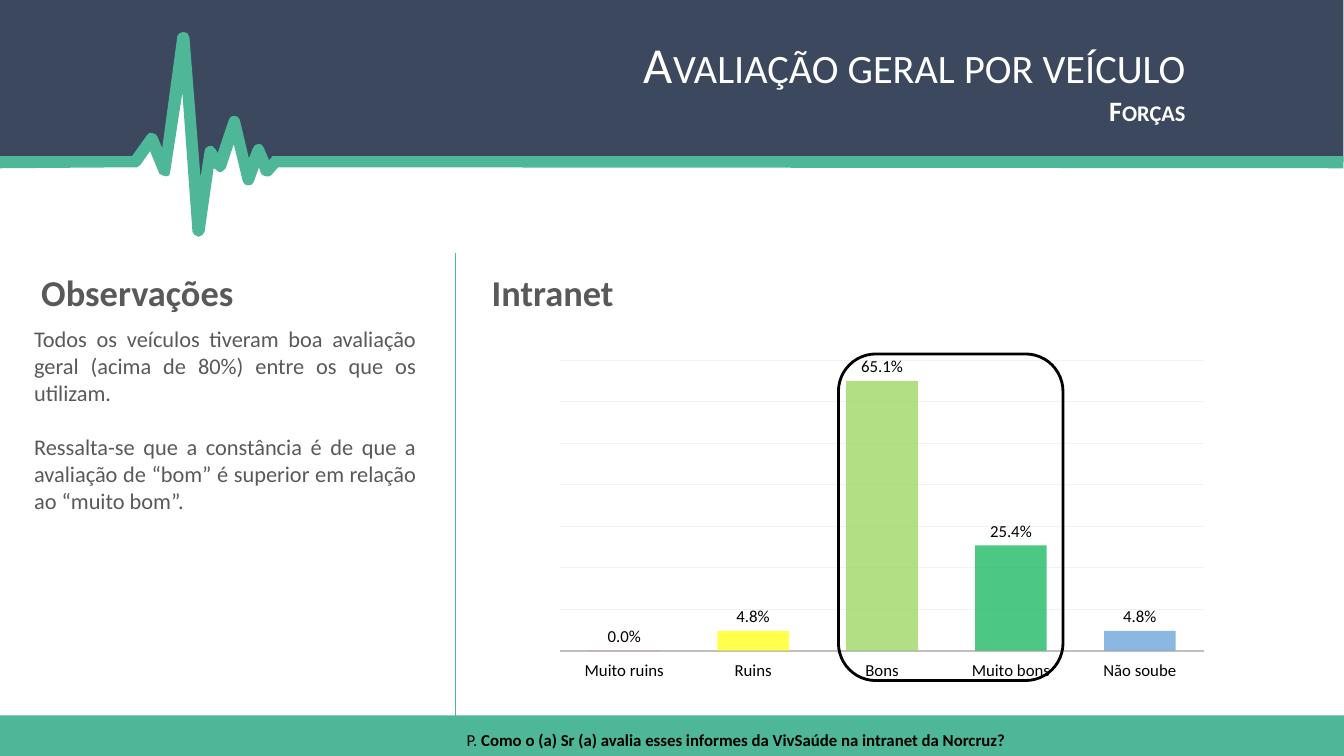
from lxml.etree import SubElement
from pptx import Presentation
from pptx.chart.data import CategoryChartData
from pptx.dml.color import RGBColor
from pptx.enum.chart import XL_CHART_TYPE, XL_LABEL_POSITION, XL_TICK_LABEL_POSITION, XL_TICK_MARK
from pptx.enum.shapes import MSO_CONNECTOR, MSO_SHAPE
from pptx.enum.text import MSO_ANCHOR, MSO_AUTO_SIZE, PP_ALIGN
from pptx.oxml import parse_xml
from pptx.oxml.ns import nsdecls, qn
from pptx.util import Cm, Pt

NAVY = RGBColor(0x3B, 0x48, 0x5D)
GREEN = RGBColor(0x4E, 0xB7, 0x98)
GRAY = RGBColor(0x59, 0x59, 0x59)
WHITE = RGBColor(0xFF, 0xFF, 0xFF)
BLACK = RGBColor(0, 0, 0)
AXIS_GRAY = RGBColor(0xBF, 0xBF, 0xBF)
GRID_GRAY = RGBColor(0xF2, 0xF2, 0xF2)
BLUE = RGBColor(0x5B, 0x9B, 0xD5)
RED = RGBColor(0xFF, 0, 0)
YELLOW = RGBColor(0xFF, 0xFF, 0)
LIME = RGBColor(0x92, 0xD0, 0x50)
LEAF = RGBColor(0, 0xB0, 0x50)

WIDTH, HEIGHT = 33.87, 19.05

# Outline points in hundredths of an inch
HEADER = [
    (1333, 0), (0, 0), (0, 161), (134, 160), (152, 141), (162, 167), (181, 74), (197, 204),
    (208, 155), (218, 165), (231, 126), (246, 176), (258, 153), (265, 169), (275, 160),
    (1333, 161)]
PULSE_TOP = [
    (1333, 155), (273, 155), (270, 155), (269, 157), (267, 159), (262, 147), (260, 144),
    (258, 143), (256, 143), (253, 144), (251, 147), (247, 157), (238, 119), (236, 116),
    (233, 115), (231, 115), (229, 116), (227, 119), (216, 152), (214, 148), (211, 145),
    (207, 145), (204, 147), (203, 150), (199, 176), (188, 37), (186, 33), (183, 32),
    (181, 32), (178, 33), (176, 36), (161, 147), (156, 135), (154, 133), (151, 132),
    (148, 132), (146, 134), (131, 155), (0, 155)]
PULSE_BOTTOM = [
    (0, 167), (134, 166), (136, 166), (139, 164), (149, 150), (158, 172), (161, 174),
    (165, 175), (168, 174), (169, 170), (181, 92), (191, 230), (193, 233), (197, 235),
    (201, 233), (203, 230), (212, 167), (214, 168), (216, 170), (219, 171), (222, 169),
    (224, 167), (232, 143), (241, 180), (243, 183), (246, 184), (250, 183), (252, 180),
    (257, 166), (259, 172), (261, 174), (264, 175), (267, 175), (269, 174), (276, 166),
    (1333, 167)]

RATINGS = [("Muito ruins", 0, RED), ("Ruins", 0.048, YELLOW), ("Bons", 0.651, LIME),
           ("Muito bons", 0.254, LEAF), ("Não soube", 0.048, BLUE)]


def format_font(font, size, color, bold=False, small_caps=False):
    font.name = "Calibri"
    font.size = Pt(size)
    font.bold = bold
    font.color.rgb = color
    if small_caps:
        font._element.set("cap", "small")


def fill_translucent(fill, color, percent):
    fill.solid()
    fill.fore_color.rgb = color
    clr = fill._xPr.find(qn("a:solidFill")).find(qn("a:srgbClr"))
    SubElement(clr, qn("a:alpha")).set("val", str(percent * 1000))


class SlideBuilder:
    def __init__(self, deck):
        self.slide = deck.slides.add_slide(deck.slide_layouts[5])
        self.shapes = self.slide.shapes

    def paint(self, shape, fill=None, line=None, weight=1):
        shape.shadow.inherit = False
        if fill is None:
            shape.fill.background()
        else:
            shape.fill.solid()
            shape.fill.fore_color.rgb = fill
        if line is None:
            shape.line.fill.background()
        else:
            shape.line.color.rgb = line
            shape.line.width = Pt(weight)

    def outline(self, points, fill):
        builder = self.shapes.build_freeform(*points[0], scale=Cm(0.0254))
        builder.add_line_segments(points[1:], close=True)
        self.paint(builder.convert_to_shape(), fill)

    def block(self, kind, left, top, width, height, **style):
        shape = self.shapes.add_shape(kind, Cm(left), Cm(top), Cm(width), Cm(height))
        self.paint(shape, **style)

    def line(self, x, top, bottom, color):
        line = self.shapes.add_connector(
            MSO_CONNECTOR.STRAIGHT, Cm(x), Cm(top), Cm(x), Cm(bottom))
        line.line.color.rgb = color
        line.line.width = Pt(1)
        SubElement(line._element.spPr, qn("a:effectLst"))

    def fill_text(self, box, paragraphs, align=PP_ALIGN.LEFT, gap=0):
        """Each paragraph is a list of (text, font format) pairs."""
        frame = box.text_frame
        frame.word_wrap = True
        frame.auto_size = MSO_AUTO_SIZE.SHAPE_TO_FIT_TEXT
        frame.vertical_anchor = MSO_ANCHOR.TOP
        for index, spans in enumerate(paragraphs):
            para = frame.add_paragraph() if index else frame.paragraphs[0]
            para.alignment = align
            if index and gap:
                para.space_before = Pt(gap)
            for text, style in spans:
                span = para.add_run()
                span.text = text
                format_font(span.font, **style)

    def text(self, left, top, width, height, paragraphs, **layout):
        box = self.shapes.add_textbox(Cm(left), Cm(top), Cm(width), Cm(height))
        self.fill_text(box, paragraphs, **layout)

    def title(self, left, top, width, height, paragraphs):
        title = self.shapes.title
        title.left, title.top = Cm(left), Cm(top)
        title.width, title.height = Cm(width), Cm(height)
        self.fill_text(title, paragraphs, align=PP_ALIGN.RIGHT)
        # Bring the title in front of the header band
        title._element.getparent().append(title._element)

    def column_chart(self, left, top, width, height, ratings):
        data = CategoryChartData(number_format="0.0%")
        data.categories = [name for name, _, _ in ratings]
        data.add_series("Series 1", [value for _, value, _ in ratings])
        chart = self.shapes.add_chart(
            XL_CHART_TYPE.COLUMN_CLUSTERED, Cm(left), Cm(top), Cm(width), Cm(height), data).chart
        chart.has_legend = False
        chart.has_title = False
        format_font(chart.font, 10, BLACK)

        # Axes
        names = chart.category_axis
        names.major_tick_mark = names.minor_tick_mark = XL_TICK_MARK.NONE
        names.tick_label_position = XL_TICK_LABEL_POSITION.LOW
        names.format.line.color.rgb = AXIS_GRAY
        names.format.line.width = Pt(1.25)
        format_font(names.tick_labels.font, 12, BLACK)
        scale = chart.value_axis
        scale.minimum_scale, scale.maximum_scale, scale.major_unit = 0, 0.7, 0.1
        scale.has_major_gridlines = True
        scale.major_gridlines.format.line.color.rgb = GRID_GRAY
        scale.major_gridlines.format.line.width = Pt(0.75)
        scale.visible = False

        # Columns and labels
        plot = chart.plots[0]
        plot.gap_width, plot.overlap, plot.vary_by_categories = 80, 25, False
        series = plot.series[0]
        fill_translucent(series.format.fill, BLUE, 70)
        for index, (_, _, color) in enumerate(ratings):
            fill_translucent(series.points[index].format.fill, color, 70)
        labels = series.data_labels
        labels.show_value = True
        labels.number_format, labels.number_format_is_linked = "0.0%", False
        labels.position = XL_LABEL_POSITION.OUTSIDE_END
        format_font(labels.font, 12, BLACK)

        # Plot area inside the chart frame
        area = chart._chartSpace.chart.plotArea
        for layout in area.findall(qn("c:layout")):
            area.remove(layout)
        sizes = "".join(f'<c:{key} val="{value}"/>' for key, value in [
            ("layoutTarget", "inner"), ("xMode", "edge"), ("yMode", "edge"),
            ("x", 0.02), ("y", 0.02), ("w", 0.96), ("h", 0.89)])
        area.insert(0, parse_xml(f'<c:layout {nsdecls("c")}><c:manualLayout>{sizes}'
                                 '</c:manualLayout></c:layout>'))


def main():
    deck = Presentation()
    deck.slide_width, deck.slide_height = Cm(WIDTH), Cm(HEIGHT)
    page = SlideBuilder(deck)
    heading = dict(size=26, color=GRAY, bold=True)
    body = dict(size=16, color=GRAY)

    # Header with pulse line
    page.outline(HEADER, NAVY)
    page.outline(PULSE_TOP + PULSE_BOTTOM, GREEN)

    # Chart and footer band
    page.column_chart(13.77, 8.92, 16.92, 8.23, RATINGS)
    page.block(MSO_SHAPE.RECTANGLE, 0, 18.03, WIDTH, 1.02, fill=GREEN)

    # Headings, remarks and divider
    page.text(12.14, 6.68, 15.34, 1.37, [[("Intranet", heading)]])
    page.text(0.61, 8.08, 10.13, 5.05, [
        [("Todos os veículos tiveram boa avaliação geral (acima de 80%) "
          "entre os que os utilizam.", body)],
        [("Ressalta-se que a constância é de que a avaliação de “bom” é superior "
          "em relação ao “muito bom”.", body)],
    ], align=PP_ALIGN.JUSTIFY, gap=19.5)
    page.line(11.48, 6.38, 18.26, GREEN)
    page.text(0.79, 6.68, 10.64, 1.37, [[("Observações", heading)]])

    # Highlight around the positive ratings
    page.block(MSO_SHAPE.ROUNDED_RECTANGLE, 21.13, 8.92, 5.66, 8.23, line=BLACK, weight=2)

    # Title and survey question
    page.title(6.25, 0.71, 23.88, 2.64, [
        [("Avaliação geral por veículo", dict(size=36, color=WHITE, small_caps=True))],
        [("Forças", dict(size=20, color=WHITE, bold=True, small_caps=True))],
    ])
    page.text(11.51, 18.26, 16.56, 0.76, [[
        ("P. ", dict(size=12, color=BLACK)),
        ("Como o (a) Sr (a) avalia esses informes da VivSaúde na intranet da Norcruz?",
         dict(size=12, color=BLACK, bold=True)),
    ]])
    deck.save("out.pptx")


if __name__ == "__main__":
    main()
